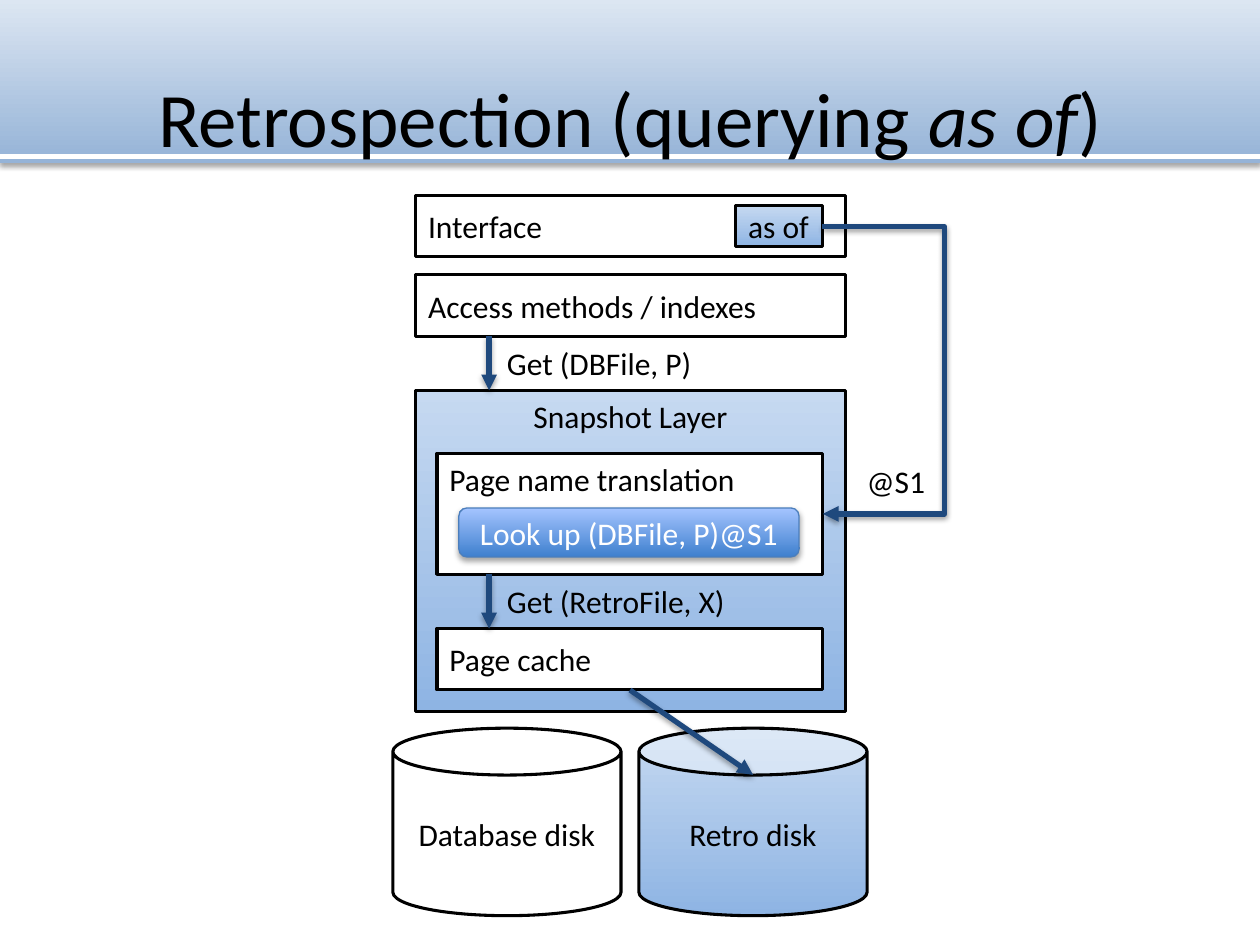
from lxml.etree import SubElement
from pptx import Presentation
from pptx.dml.color import RGBColor
from pptx.enum.shapes import MSO_CONNECTOR as Link, MSO_SHAPE as Shape
from pptx.enum.text import MSO_ANCHOR as Anchor, PP_ALIGN as Align
from pptx.oxml.ns import qn
from pptx.util import Cm, Pt

COLORS = {
    "black": "000000", "white": "FFFFFF", "arrow": "1F497D",
    "band_dark": "95B3D7", "band_light": "DCE6F2",
    "layer_dark": "8EB4E3", "layer_light": "C6D9F1",
    "button_dark": "3F80CE", "button_light": "A4C4FF", "button_line": "4B7EBC",
}
LAYER = ("layer_dark", "layer_light")
BUTTON = ("button_dark", "button_light")
BAND = ("band_dark", "band_light")


def color(name):
    return RGBColor.from_string(COLORS[name])


class Diagram:
    """Style and current slide; all lengths are in centimetres."""
    font, size = "Calibri", 18

    def __init__(self, prs):
        self.slide = prs.slides.add_slide(prs.slide_layouts[5])
        self.shapes = self.slide.shapes

    def format_runs(self, p, size, ink):
        for r in p.runs:
            r.font.name, r.font.size = self.font, Pt(size)
            r.font.color.rgb = color(ink)

    def title(self, parts, x, y, w, h):
        """Fill the title from (text, italic) pairs and bring it to the front."""
        sp = self.shapes.title
        sp.left, sp.top, sp.width, sp.height = Cm(x), Cm(y), Cm(w), Cm(h)
        sp.text_frame.vertical_anchor = Anchor.MIDDLE
        p = sp.text_frame.paragraphs[0]
        p.alignment = Align.CENTER
        for text, italic in parts:
            r = p.add_run()
            r.text, r.font.italic = text, italic
        self.format_runs(p, 44, "black")
        self.shapes._spTree.append(sp._element)

    def fill(self, sp, fill):
        """Take None, a colour name, or a (bottom, top) pair for a gradient."""
        if fill is None:
            sp.fill.background()
        elif isinstance(fill, str):
            sp.fill.solid()
            sp.fill.fore_color.rgb = color(fill)
        else:
            sp.fill.gradient()
            sp.fill.gradient_angle = 90
            for stop, name in zip(sp.fill.gradient_stops, fill):
                stop.color.rgb = color(name)

    def shadow(self, sp, alpha, dist):
        pr = sp._element.spPr
        for old in pr.findall(qn("a:effectLst")):
            pr.remove(old)
        outer = SubElement(SubElement(pr, qn("a:effectLst")), qn("a:outerShdw"),
                           blurRad="40000", dist=str(dist), dir="5400000", rotWithShape="0")
        ink = SubElement(outer, qn("a:srgbClr"), val=COLORS["black"])
        SubElement(ink, qn("a:alpha"), val=str(alpha * 1000))

    def box(self, text, x, y, w, h, fill=None, kind=Shape.RECTANGLE, align=Align.LEFT,
            anchor=Anchor.MIDDLE, ink="black", line="black", weight=1.75, shadow=False):
        sp = self.shapes.add_shape(kind, Cm(x), Cm(y), Cm(w), Cm(h))
        self.fill(sp, fill)
        if line:
            sp.line.color.rgb, sp.line.width = color(line), Pt(weight)
        else:
            sp.line.fill.background()
        sp.shadow.inherit = False
        if shadow:
            self.shadow(sp, 35, 23000)
        if text:
            tf = sp.text_frame
            tf.text, tf.vertical_anchor = text, anchor
            tf.paragraphs[0].alignment = align
            self.format_runs(tf.paragraphs[0], self.size, ink)

    def label(self, text, x, y, w, align=Align.LEFT, wrap=False):
        tf = self.shapes.add_textbox(Cm(x), Cm(y), Cm(w), Cm(1.02)).text_frame
        tf.text, tf.word_wrap = text, wrap
        tf.paragraphs[0].alignment = align
        self.format_runs(tf.paragraphs[0], self.size, "black")

    def line(self, x1, y1, x2, y2, ink, kind=Link.STRAIGHT):
        cxn = self.shapes.add_connector(kind, Cm(x1), Cm(y1), Cm(x2), Cm(y2))
        cxn.line.color.rgb, cxn.line.width = color(ink), Pt(3)
        SubElement(cxn._element.spPr, qn("a:effectLst"))
        return cxn

    def arrow(self, x1, y1, x2, y2, kind=Link.STRAIGHT):
        cxn = self.line(x1, y1, x2, y2, "arrow", kind)
        SubElement(cxn.line._get_or_add_ln(), qn("a:tailEnd"), type="triangle")
        self.shadow(cxn, 38, 20000)
        return cxn

    def loop_arrow(self, x, y1, y2, reach):
        """Leave x to the right by reach and come back to x lower down."""
        width = 0.01
        cxn = self.arrow(x, y1, x + width, y2, Link.ELBOW)
        geom = cxn._element.spPr.find(qn("a:prstGeom"))
        guides = geom.find(qn("a:avLst"))
        if guides is None:
            guides = SubElement(geom, qn("a:avLst"))
        SubElement(guides, qn("a:gd"), name="adj1",
                   fmla=f"val {round(reach / width * 100000)}")


def main():
    prs = Presentation()
    prs.slide_width, prs.slide_height = Cm(25.4), Cm(19.05)
    d = Diagram(prs)
    d.box("", 0, 0, 25.4, 3.28, BAND, line=None, shadow=True)
    d.line(0, 3.15, 25.4, 3.15, "white")
    d.title([("Retrospection (querying ", False), ("as of", True), (")", False)],
            1.27, 0.76, 22.86, 3.18)

    outer_x, outer_w, inner_x, inner_w, row_h = 8.38, 8.66, 8.81, 7.77, 1.24
    inner_right = inner_x + inner_w
    access_y, layer_y, names_y, names_h, cache_y = 5.54, 7.87, 9.14, 2.44, 12.67
    d.box("Snapshot Layer", outer_x, layer_y, outer_w, 6.48, LAYER,
          align=Align.CENTER, anchor=Anchor.TOP)
    d.box("Access methods / indexes", outer_x, access_y, outer_w, row_h)
    d.box("Page cache", inner_x, cache_y, inner_w, row_h, "white")
    d.box("Page name translation", inner_x, names_y, inner_w, names_h, "white",
          anchor=Anchor.TOP)
    for text, x, fill in (("Database disk", 7.92, None), ("Retro disk", 12.88, LAYER)):
        d.box(text, x, 14.68, 4.6, 3.78, fill, Shape.CAN, Align.CENTER)
    d.box("Interface", outer_x, 3.94, outer_w, row_h)
    d.box("as of", 14.83, 4.14, 1.75, 0.84, LAYER)
    d.loop_arrow(inner_right, 4.57, 10.36, 2.46)
    d.box("Look up (DBFile, P)@S1", 9.25, 10.24, 6.86, 0.99, BUTTON,
          Shape.ROUNDED_RECTANGLE, Align.CENTER, ink="white",
          line="button_line", weight=0.75, shadow=True)

    for text, top, bottom, w in (("Get (DBFile, P)", access_y + row_h, layer_y, 4.27),
                                 ("Get (RetroFile, X)", names_y + names_h, cache_y, 4.95)):
        d.arrow(9.86, top, 9.86, bottom)
        d.label(text, 9.97, top + 0.03, w)
    d.arrow(12.7, cache_y + row_h, 15.18, 15.62)
    d.label("@S1", 17.02, 9.19, 1.88, Align.RIGHT, wrap=True)
    prs.save("out.pptx")


if __name__ == "__main__":
    main()
